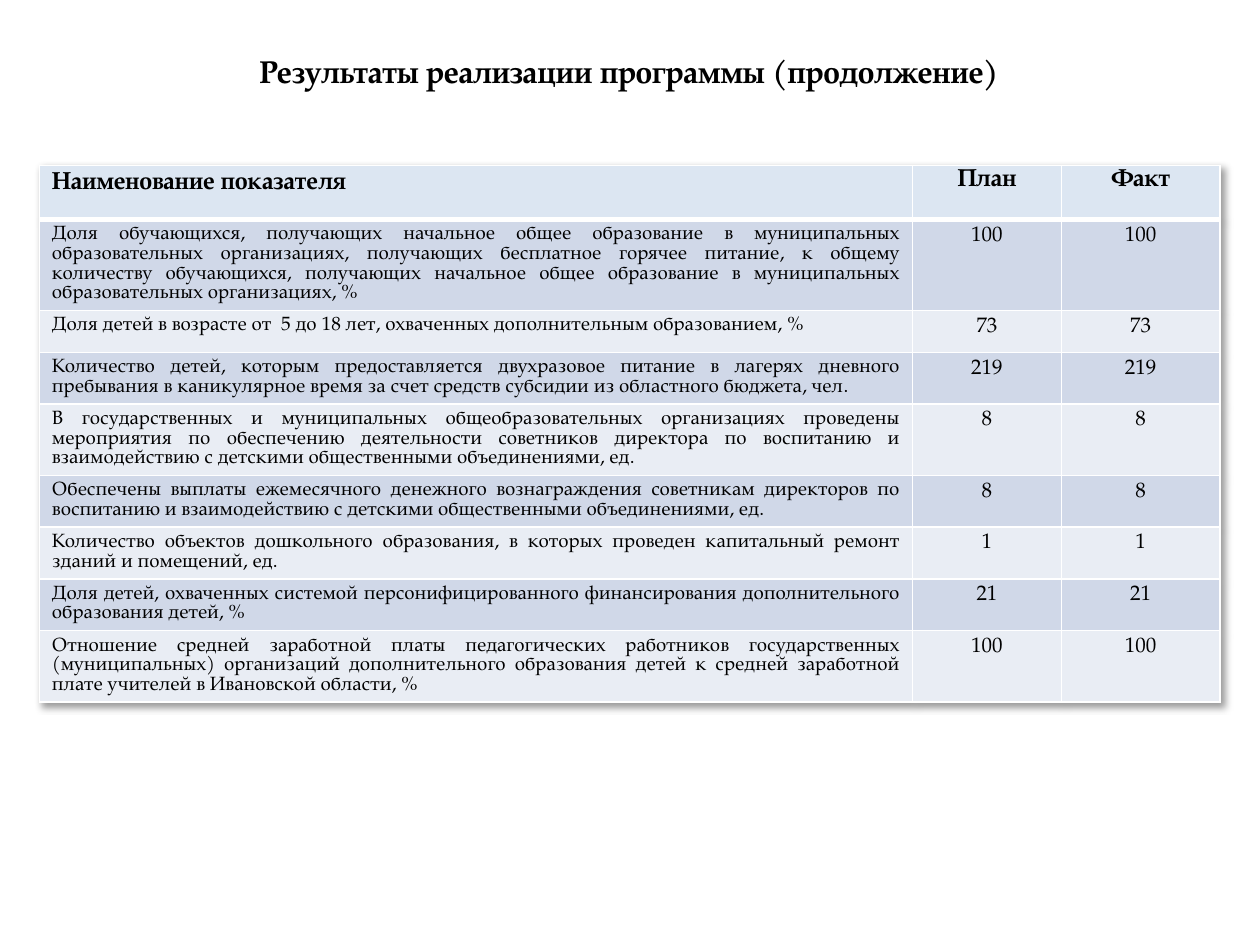
import pptx
import pptx.dml.color
import pptx.enum.text
import pptx.oxml
import pptx.oxml.ns
import pptx.util

Pt = pptx.util.Pt
RGBColor = pptx.dml.color.RGBColor
ALIGN = pptx.enum.text.PP_ALIGN

FONT = "TeX Gyre Pagella"
BLACK = RGBColor(0x00, 0x00, 0x00)
HEADER_FILL = RGBColor(0xDC, 0xE6, 0xF2)
BAND_FILLS = (RGBColor(0xE9, 0xED, 0xF4), RGBColor(0xD0, 0xD8, 0xE8))
BORDER = RGBColor(0xFF, 0xFF, 0xFF)
NAMESPACE = pptx.oxml.ns.nsdecls("a")

ROWS = [
    ("Наименование показателя", "План", "Факт"),
    ("Доля обучающихся, получающих начальное общее образование в муниципальных "
     "образовательных организациях, получающих бесплатное горячее питание, к общему "
     "количеству обучающихся, получающих начальное общее образование в муниципальных "
     "образовательных организациях, %", "100", "100"),
    ("Доля детей в возрасте от  5 до 18 лет, охваченных дополнительным образованием, %",
     "73", "73"),
    ("Количество детей, которым предоставляется двухразовое питание в лагерях дневного "
     "пребывания в каникулярное время за счет средств субсидии из областного бюджета, чел.",
     "219", "219"),
    ("В государственных и муниципальных общеобразовательных организациях проведены "
     "мероприятия по обеспечению деятельности советников директора по воспитанию и "
     "взаимодействию с детскими общественными объединениями, ед.", "8", "8"),
    ("Обеспечены выплаты ежемесячного денежного вознаграждения советникам директоров по "
     "воспитанию и взаимодействию с детскими общественными объединениями, ед.", "8", "8"),
    ("Количество объектов дошкольного образования, в которых проведен капитальный ремонт "
     "зданий и помещений, ед.", "1", "1"),
    ("Доля детей, охваченных системой персонифицированного финансирования дополнительного "
     "образования детей, %", "21", "21"),
    ("Отношение средней заработной платы педагогических работников государственных "
     "(муниципальных) организаций дополнительного образования детей к средней заработной "
     "плате учителей в Ивановской области, %", "100", "100"),
]
COLUMN_WIDTHS = (499, 85, 90.7)
HEADER_HEIGHT = 31
ROW_HEIGHT = 24


def add_text(para, text, size, bold, align):
    para.alignment = align
    span = para.add_run()
    span.text = text
    span.font.name = FONT
    span.font.size = Pt(size)
    span.font.bold = bold
    span.font.color.rgb = BLACK


def set_borders(cell, bottom_width):
    """Draw 1 pt white cell borders, with the bottom one bottom_width points wide."""
    properties = cell._tc.get_or_add_tcPr()
    widths = {"lnL": 1, "lnR": 1, "lnT": 1, "lnB": bottom_width}
    for position, (side, width) in enumerate(widths.items()):
        properties.insert(position, pptx.oxml.parse_xml(
            f'<a:{side} {NAMESPACE} w="{Pt(width)}"><a:solidFill>'
            f'<a:srgbClr val="{BORDER}"/></a:solidFill></a:{side}>'))


deck = pptx.Presentation()
deck.slide_width = Pt(720)
deck.slide_height = Pt(540)
page = deck.slides.add_slide(deck.slide_layouts[6])

frame = page.shapes.add_table(
    len(ROWS), len(COLUMN_WIDTHS), Pt(22.5), Pt(94.5),
    Pt(sum(COLUMN_WIDTHS)), Pt(HEADER_HEIGHT + ROW_HEIGHT * (len(ROWS) - 1)))
table = frame.table
for column, width in zip(table.columns, COLUMN_WIDTHS):
    column.width = Pt(width)

table._tbl.tblPr.insert(0, pptx.oxml.parse_xml(
    f'<a:effectLst {NAMESPACE}><a:outerShdw blurRad="{Pt(4)}" dist="{Pt(3)}" '
    'dir="2700000" algn="tl" rotWithShape="0"><a:srgbClr val="000000">'
    '<a:alpha val="40000"/></a:srgbClr></a:outerShdw></a:effectLst>'))

for row_index, row in enumerate(ROWS):
    is_header = row_index == 0
    table.rows[row_index].height = Pt(HEADER_HEIGHT if is_header else ROW_HEIGHT)
    for column_index, text in enumerate(row):
        is_name = column_index == 0
        cell = table.cell(row_index, column_index)
        cell.fill.solid()
        cell.fill.fore_color.rgb = HEADER_FILL if is_header else BAND_FILLS[row_index % 2]
        set_borders(cell, 3 if is_header else 1)
        para = cell.text_frame.paragraphs[0]
        if is_header:
            add_text(para, text, 14, True, ALIGN.LEFT if is_name else ALIGN.CENTER)
            if not is_name:
                para.line_spacing = 1.15
                cell.margin_left = cell.margin_right = Pt(5)
                cell.margin_top = cell.margin_bottom = Pt(0)
        elif is_name:
            add_text(para, text, 11, False, ALIGN.JUSTIFY)
        else:
            add_text(para, text, 12, False, ALIGN.CENTER)

title_box = page.shapes.add_textbox(Pt(116), Pt(26), Pt(487.5), Pt(29))
title_box.text_frame.word_wrap = True
title_box.text_frame.auto_size = pptx.enum.text.MSO_AUTO_SIZE.SHAPE_TO_FIT_TEXT
add_text(title_box.text_frame.paragraphs[0],
         "Результаты реализации программы (продолжение)", 18, True, ALIGN.CENTER)

deck.save("out.pptx")
